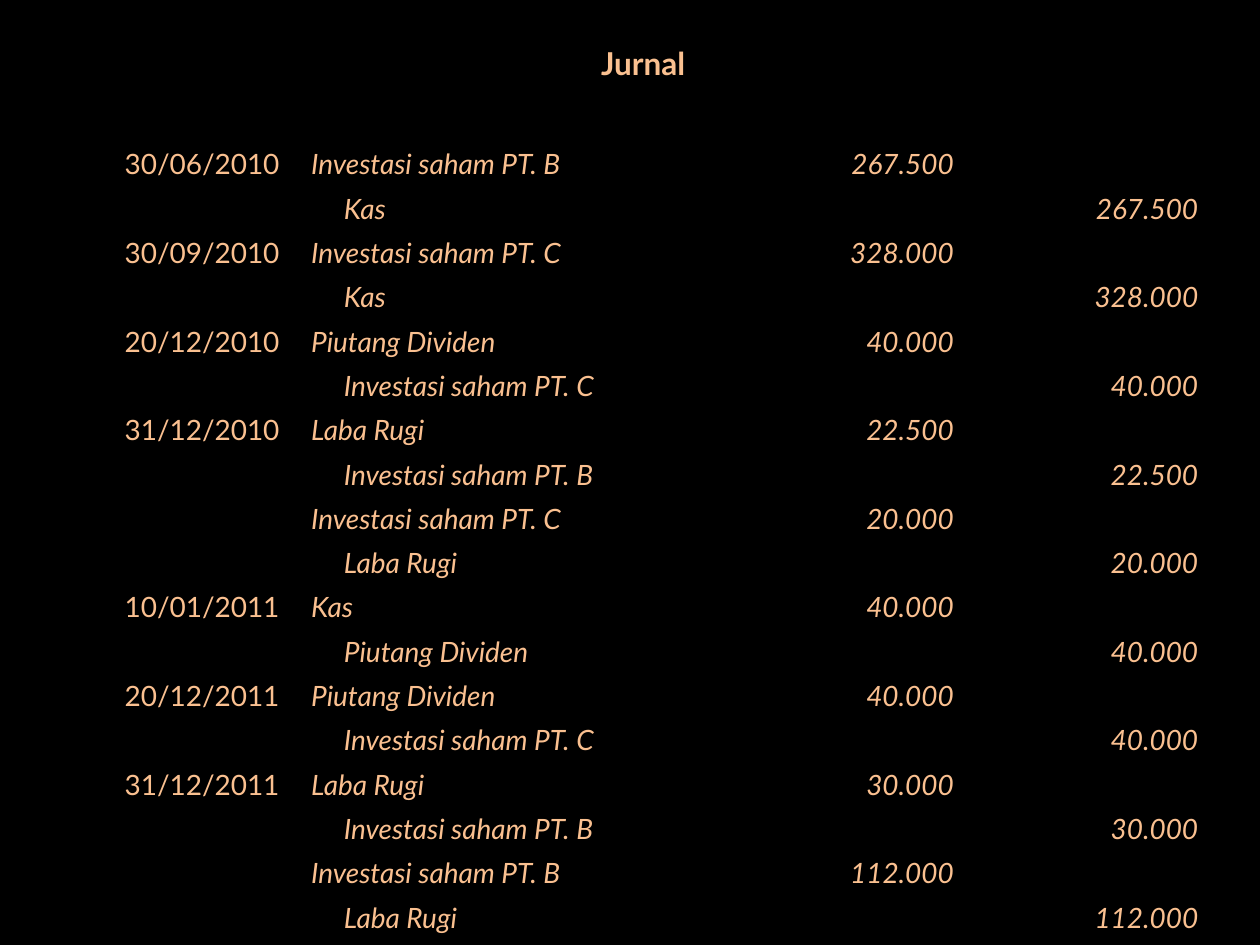
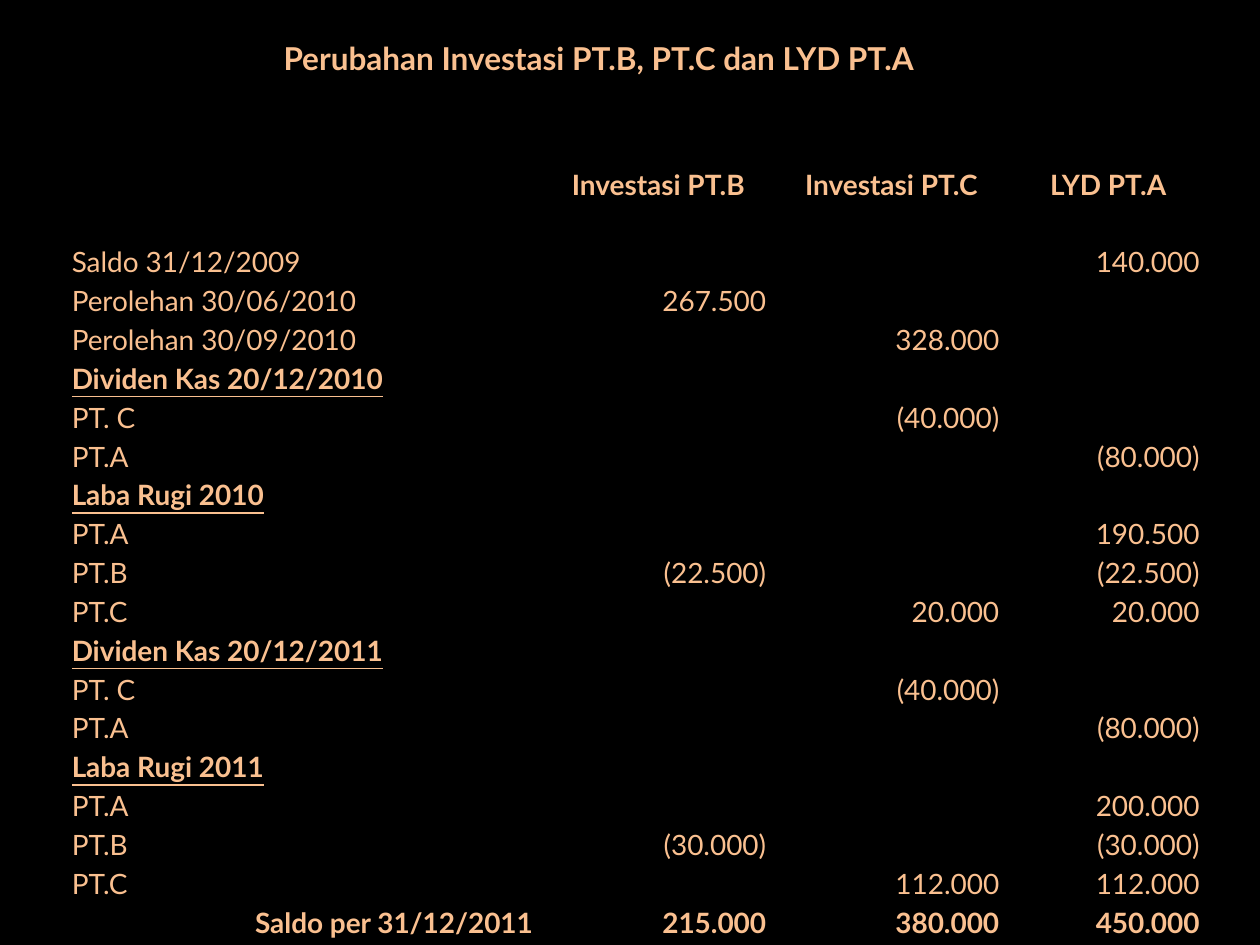
from dataclasses import dataclass
from typing import NamedTuple

from pptx import Presentation
from pptx.dml.color import RGBColor
from pptx.enum import text
from pptx.util import Inches, Pt

PEACH = RGBColor(0xFA, 0xC0, 0x90)
BLACK = RGBColor(0x00, 0x00, 0x00)
FONT = "Lato"
PLAIN_GRID = "{2D5ABB26-0587-4C30-8999-92F81FD0307C}"  # no style, no grid
PAD, INDENT = 0.07, 0.33
LEFT, MID, RIGHT = text.PP_ALIGN.LEFT, text.PP_ALIGN.CENTER, text.PP_ALIGN.RIGHT


@dataclass
class Cell:
    words: str = ""
    align: text.PP_ALIGN = LEFT
    bold: bool = False
    slant: bool = False
    line: bool = False
    pad: float = PAD


class Head(NamedTuple):
    words: str
    left: float
    top: float
    width: float


class Grid(NamedTuple):
    left: float
    top: float
    cols: list[float]
    rows: list[float]


class Entry(NamedTuple):
    date: str
    debit: str
    credit: str
    amount: str


class Post(NamedTuple):
    name: str
    b: str = ""
    c: str = ""
    lyd: str = ""


# Journal entries: each gives one debit row and one credit row
ENTRIES = [
    Entry("30/06/2010", "Investasi saham PT. B", "Kas", "267.500"),
    Entry("30/09/2010", "Investasi saham PT. C", "Kas", "328.000"),
    Entry("20/12/2010", "Piutang Dividen", "Investasi saham PT. C", "40.000"),
    Entry("31/12/2010", "Laba Rugi", "Investasi saham PT. B", "22.500"),
    Entry("", "Investasi saham PT. C", "Laba Rugi", "20.000"),
    Entry("10/01/2011", "Kas", "Piutang Dividen", "40.000"),
    Entry("20/12/2011", "Piutang Dividen", "Investasi saham PT. C", "40.000"),
    Entry("31/12/2011", "Laba Rugi", "Investasi saham PT. B", "30.000"),
    Entry("", "Investasi saham PT. B", "Laba Rugi", "112.000"),
]

# Changes in each balance; a post without values is a section heading
LABELS = Post("", "Investasi PT.B", "Investasi PT.C", "LYD PT.A")
POSTS = [
    Post("Saldo 31/12/2009", lyd="140.000"),
    Post("Perolehan 30/06/2010", b="267.500"),
    Post("Perolehan 30/09/2010", c="328.000"),
    Post("Dividen Kas 20/12/2010"),
    Post("PT. C", c="(40.000)"),
    Post("PT.A", lyd="(80.000)"),
    Post("Laba Rugi 2010"),
    Post("PT.A", lyd="190.500"),
    Post("PT.B", b="(22.500)", lyd="(22.500)"),
    Post("PT.C", c="20.000", lyd="20.000"),
    Post("Dividen Kas 20/12/2011"),
    Post("PT. C", c="(40.000)"),
    Post("PT.A", lyd="(80.000)"),
    Post("Laba Rugi 2011"),
    Post("PT.A", lyd="200.000"),
    Post("PT.B", b="(30.000)", lyd="(30.000)"),
    Post("PT.C", c="112.000", lyd="112.000"),
]
TOTAL = Post("Saldo per 31/12/2011", "215.000", "380.000", "450.000")


def style(para, size: int, bold: bool = False, slant: bool = False,
          line: bool = False) -> None:
    for run in para.runs:
        font = run.font
        font.name, font.size = FONT, Pt(size)
        font.bold, font.italic, font.underline = bold, slant, line
        font.color.rgb = PEACH


def add_page(deck, head: Head):
    """Add a black slide with its title."""
    page = deck.slides.add_slide(deck.slide_layouts[5])
    page.background.fill.solid()
    page.background.fill.fore_color.rgb = BLACK
    title = page.shapes.title
    title.left, title.top = Inches(head.left), Inches(head.top)
    title.width, title.height = Inches(head.width), Inches(0.3)
    frame = title.text_frame
    frame.text = head.words
    frame.word_wrap = True
    frame.auto_size = text.MSO_AUTO_SIZE.NONE
    frame.vertical_anchor = text.MSO_ANCHOR.TOP
    frame.margin_left = frame.margin_right = 0
    frame.margin_top = frame.margin_bottom = 0
    frame.paragraphs[0].alignment = LEFT
    style(frame.paragraphs[0], 18, bold=True)
    return page


def add_grid(page, grid: Grid, cells: list[list[Cell]]) -> None:
    """Add a table without lines or fills."""
    table = page.shapes.add_table(
        len(grid.rows), len(grid.cols), Inches(grid.left), Inches(grid.top),
        Inches(sum(grid.cols)), Inches(sum(grid.rows))).table
    table.first_row = table.horz_banding = False
    table._tbl.tblPr[0].text = PLAIN_GRID
    for col, width in zip(table.columns, grid.cols):
        col.width = Inches(width)
    for row, height, line in zip(table.rows, grid.rows, cells):
        row.height = Inches(height)
        for box, cell in zip(row.cells, line):
            box.fill.background()
            box.margin_left, box.margin_right = Inches(cell.pad), Inches(PAD)
            box.margin_top = box.margin_bottom = 0
            box.text_frame.text = cell.words
            para = box.text_frame.paragraphs[0]
            para.alignment = cell.align
            style(para, 16, cell.bold, cell.slant, cell.line)


def entry_rows(entry: Entry) -> list[list[Cell]]:
    sum_cell = Cell(entry.amount, RIGHT, slant=True)
    return [
        [Cell(entry.date), Cell(entry.debit, slant=True), sum_cell, Cell()],
        [Cell(), Cell(entry.credit, slant=True, pad=INDENT), Cell(), sum_cell],
    ]


def post_row(post: Post) -> list[Cell]:
    name, *sums = post
    top = not any(sums)
    return [Cell(name, bold=top, line=top)] + [Cell(s, RIGHT) for s in sums]


def main() -> None:
    deck = Presentation()
    deck.slide_width, deck.slide_height = Inches(10), Inches(7.5)

    # Journal
    page = add_page(deck, Head("Jurnal", 4.77, 0.35, 0.99))
    rows = [row for entry in ENTRIES for row in entry_rows(entry)]
    high = 6.33 / len(rows)
    add_grid(page, Grid(0.92, 1.17, [1.48, 3.3, 1.94, 1.94],
                        [high] * len(rows)), rows)

    # Changes in investments and retained earnings
    page = add_page(deck, Head("Perubahan Investasi PT.B, PT.C dan LYD PT.A",
                               2.25, 0.31, 5.75))
    rows = [[Cell(word, MID, bold=True) for word in LABELS]]
    rows += [post_row(post) for post in POSTS]
    rows.append([Cell(word, RIGHT, bold=True) for word in TOTAL])
    high = 6.17 / (len(rows) + 1)  # the label row is two rows high
    add_grid(page, Grid(0.5, 1.33, [3.8, 1.85, 1.85, 1.59],
                        [2 * high] + [high] * (len(rows) - 1)), rows)

    deck.save("out.pptx")


if __name__ == "__main__":
    main()
